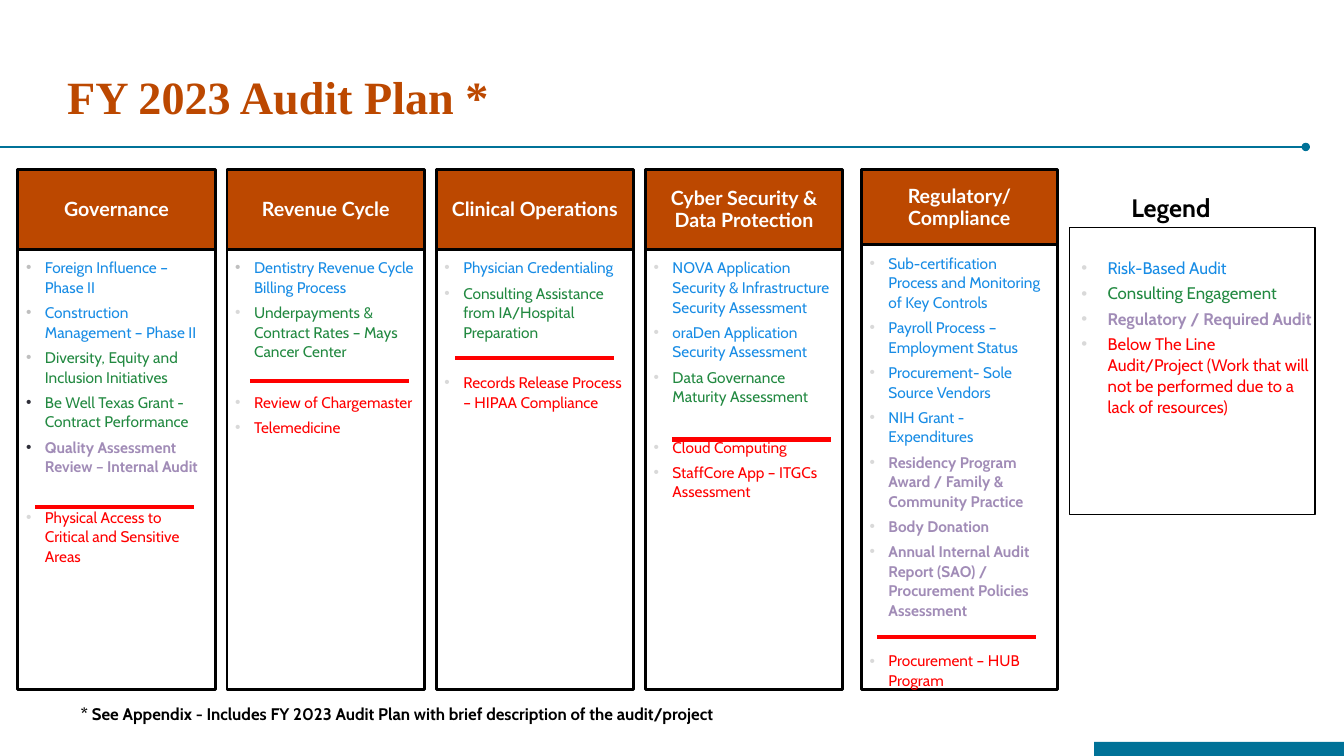
import dataclasses

import pptx
import pptx.dml.color
import pptx.enum.shapes
import pptx.enum.text
import pptx.oxml.ns
import pptx.util
from lxml import etree

Pt = pptx.util.Pt
Align = pptx.enum.text.PP_ALIGN
Anchor = pptx.enum.text.MSO_ANCHOR
Shape = pptx.enum.shapes.MSO_SHAPE


@dataclasses.dataclass(frozen=True)
class Theme:
    accent: str = "BC4800"
    teal: str = "007298"
    black: str = "000000"
    white: str = "FFFFFF"
    risk: str = "188CE5"
    consulting: str = "228941"
    required: str = "A18CB7"
    below: str = "FF0000"
    pale_bullet: str = "D9D9D9"
    grey_bullet: str = "BFBFBF"
    dark_bullet: str = "2E2E38"
    title_font: str = "Times New Roman"
    header_font: str = "Lato"
    body_font: str = "Cabin"
    title_size: float = 33
    legend_title_size: float = 18
    header_size: float = 14
    legend_size: float = 12
    item_size: float = 11


THEME = Theme()
HEADER_TOP, PANEL_BOTTOM = 121, 492.5
RULE_LENGTH = 113.5

# Each column: header lines, left, width, panel top, rule start, list items.
# Each item: text, audit kind and, where it differs, bullet colour.
COLUMNS = [
    (["Governance"], 12.8, 141, 178, (25.2, 362), [
        ("Foreign Influence – Phase II", "risk", "grey_bullet"),
        ("Construction Management – Phase II", "risk", "grey_bullet"),
        ("Diversity, Equity and Inclusion Initiatives", "consulting", "grey_bullet"),
        ("Be Well Texas Grant - Contract Performance", "consulting", "dark_bullet"),
        ("Quality Assessment Review – Internal Audit", "required", "dark_bullet"),
        ("Physical Access to Critical and Sensitive Areas", "below"),
    ]),
    (["Revenue Cycle"], 162.3, 141, 178, (178.6, 272), [
        ("Dentistry Revenue Cycle Billing Process", "risk", "grey_bullet"),
        ("Underpayments & Contract Rates – Mays Cancer Center", "consulting"),
        ("Review of Chargemaster", "below"),
        ("Telemedicine", "below"),
    ]),
    (["Clinical Operations"], 311.8, 141, 178, (325.4, 255.5), [
        ("Physician Credentialing", "risk"),
        ("Consulting Assistance from IA/Hospital Preparation", "consulting"),
        ("Records Release Process – HIPAA Compliance", "below"),
    ]),
    (["Cyber Security & Data Protection"], 461.3, 141, 178, (480.2, 314), [
        ("NOVA Application Security & Infrastructure Security Assessment", "risk"),
        ("oraDen Application Security Assessment", "risk"),
        ("Data Governance Maturity Assessment", "consulting"),
        ("Cloud Computing", "below"),
        ("StaffCore App – ITGCs Assessment", "below"),
    ]),
    (["Regulatory/", "Compliance"], 615.6, 140, 174.8, (627.1, 455), [
        ("Sub-certification Process and Monitoring of Key Controls", "risk"),
        ("Payroll Process – Employment Status", "risk"),
        ("Procurement- Sole Source Vendors", "risk"),
        ("NIH Grant - Expenditures", "risk"),
        ("Residency Program Award / Family & Community Practice", "required"),
        ("Body Donation", "required"),
        ("Annual Internal Audit Report (SAO) / Procurement Policies Assessment", "required"),
        ("Procurement – HUB Program", "below"),
    ]),
]

LEGEND = [
    ("Risk-Based Audit", "risk"),
    ("Consulting Engagement", "consulting"),
    ("Regulatory / Required Audit", "required"),
    ("Below The Line Audit/Project (Work that will not be performed "
     "due to a lack of resources)", "below"),
]


def apply(target, formats):
    for name, value in formats.items():
        setattr(target, name, value)


def color(name):
    return pptx.dml.color.RGBColor.from_string(getattr(THEME, name))


def place(shape, left, top, width, height):
    apply(shape, {"left": Pt(left), "top": Pt(top), "width": Pt(width), "height": Pt(height)})


def paint(shape, fill, line=None, weight=0):
    shape.fill.solid()
    shape.fill.fore_color.rgb = color(fill)
    if line:
        shape.line.color.rgb = color(line)
        shape.line.width = Pt(weight)
    else:
        shape.line.fill.background()


def set_frame(frame, insets, anchor=Anchor.TOP):
    """Insets run left, top, right, bottom."""
    left, top, right, bottom = map(Pt, insets)
    apply(frame, {"word_wrap": True, "auto_size": pptx.enum.text.MSO_AUTO_SIZE.NONE,
                  "vertical_anchor": anchor, "margin_left": left, "margin_top": top,
                  "margin_right": right, "margin_bottom": bottom})


def add_para(frame, index, text, font, size, ink, bold=True, **formats):
    para = frame.paragraphs[0] if index == 0 else frame.add_paragraph()
    apply(para, {"space_before": Pt(0), "alignment": Align.LEFT, **formats})
    span = para.add_run()
    span.text = text
    apply(span.font, {"name": font, "size": Pt(size), "bold": bold})
    span.font.color.rgb = color(ink)
    return para


def add_bullet(para, ink, indent, hanging):
    properties = para._p.get_or_add_pPr()
    properties.set("marL", str(Pt(indent)))
    properties.set("indent", str(-Pt(hanging)))
    tag = pptx.oxml.ns.qn
    bullet_color = etree.SubElement(properties, tag("a:buClr"))
    etree.SubElement(bullet_color, tag("a:srgbClr"), val=getattr(THEME, ink))
    etree.SubElement(properties, tag("a:buFont"), typeface="Arial")
    etree.SubElement(properties, tag("a:buChar"), char="•")


def fill_list(frame, items, size, pitch, gap, indent, hanging, rule_gap=0):
    """The first item below the line gets rule_gap of extra space above it."""
    previous = None
    for index, (text, kind, *bullet) in enumerate(items):
        starts_below = kind == "below" and previous != "below"
        before = (gap + rule_gap * starts_below) if index else 0
        para = add_para(frame, index, text, THEME.body_font, size, kind, kind == "required",
                        line_spacing=Pt(pitch), space_before=Pt(before))
        add_bullet(para, bullet[0] if bullet else "pale_bullet", indent, hanging)
        previous = kind


def add_block(page, preset, box, *paint_values):
    shape = page.shapes.add_shape(preset, *map(Pt, box))
    shape.shadow.inherit = False
    paint(shape, *paint_values)
    return shape


def add_rule(page, left, top, length, ink, weight):
    rule = page.shapes.add_connector(pptx.enum.shapes.MSO_CONNECTOR.STRAIGHT,
                                     Pt(left), Pt(top), Pt(left + length), Pt(top))
    rule.line.color.rgb = color(ink)
    rule.line.width = Pt(weight)
    etree.SubElement(rule._element.spPr, pptx.oxml.ns.qn("a:effectLst"))


def add_column(page, header, left, width, panel_top, rule_start, items):
    panel = add_block(page, Shape.RECTANGLE, (left, panel_top, width, PANEL_BOTTOM - panel_top),
                      "white", "black", 2)
    set_frame(panel.text_frame, (5.8, 5.8, 5.8, 5.8))
    fill_list(panel.text_frame, items, THEME.item_size, 14, 4, 13.5, 13.5, rule_gap=18)
    heading = add_block(page, Shape.RECTANGLE, (left, HEADER_TOP, width, panel_top - HEADER_TOP),
                        "accent", "black", 2)
    set_frame(heading.text_frame, (7.9, 4.3, 7.9, 4.3), Anchor.MIDDLE)
    for index, text in enumerate(header):
        add_para(heading.text_frame, index, text, THEME.header_font, THEME.header_size, "white",
                 alignment=Align.CENTER, line_spacing=Pt(16))
    add_rule(page, *rule_start, RULE_LENGTH, "below", 3)


def add_label(page, box, insets, text, size, **formats):
    label = page.shapes.add_textbox(*map(Pt, box))
    set_frame(label.text_frame, insets)
    add_para(label.text_frame, 0, text, THEME.body_font, size, "black", **formats)


def main():
    deck = pptx.Presentation()
    apply(deck, {"slide_width": Pt(960.5), "slide_height": Pt(540)})
    page = deck.slides.add_slide(deck.slide_layouts[1])

    title, legend = page.shapes.title, page.placeholders[1]
    place(title, 48, 30.2, 864.7, 62.6)
    set_frame(title.text_frame, (0, 0, 0, 3.6), Anchor.BOTTOM)
    add_para(title.text_frame, 0, "FY 2023 Audit Plan *", THEME.title_font, THEME.title_size,
             "accent", line_spacing=0.9)

    add_block(page, Shape.RECTANGLE, (781.9, 529.9, 178.6, 10.1), "teal")
    add_rule(page, 0, 105, 930.2, "teal", 1.5)
    add_block(page, Shape.OVAL, (930.2, 102, 6, 6), "teal")

    for column in COLUMNS:
        add_column(page, *column)

    place(legend, 764.6, 162.8, 175.2, 205)
    paint(legend, "white", "black", 0.75)
    set_frame(legend.text_frame, (0, 20.9, 0, 0))
    fill_list(legend.text_frame, LEGEND, THEME.legend_size, 15, 3, 27, 18.7)

    add_label(page, (801.4, 133.9, 76.3, 28.8), (7.2, 3.6, 0, 3.6), "Legend",
              THEME.legend_title_size)
    add_label(page, (57.6, 501.8, 505.4, 15.1), (0, 2.9, 0, 0),
              "* See Appendix - Includes FY 2023 Audit Plan with brief description "
              "of the audit/project", THEME.legend_size, line_spacing=0.85)
    deck.save("out.pptx")


if __name__ == "__main__":
    main()
